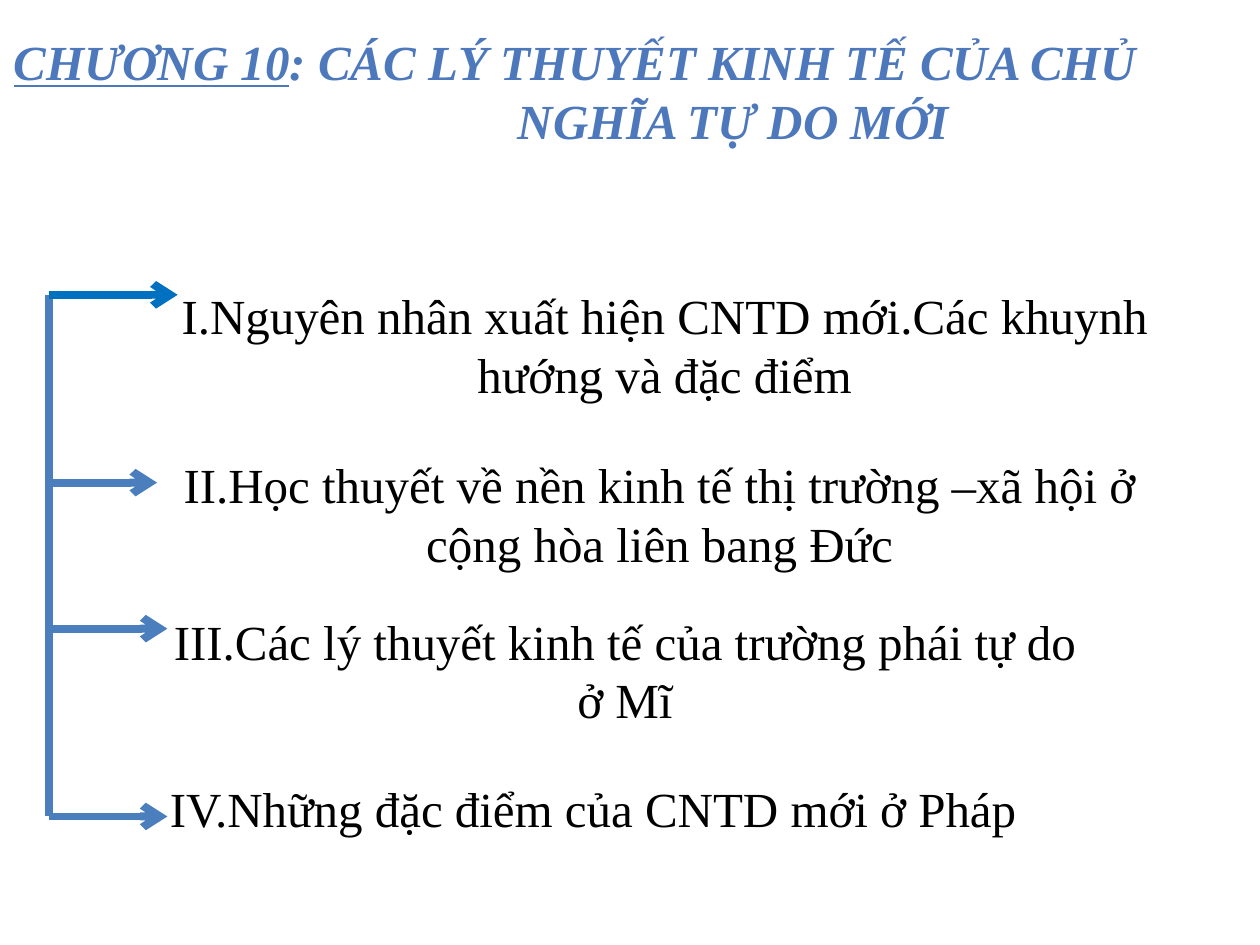
from lxml import etree
from pptx import Presentation
from pptx import util as u
from pptx.dml.color import RGBColor
from pptx.enum import shapes, text
from pptx.oxml import ns

COLUMNS, ROWS = 100, 75
CELL = u.Inches(0.1)
FONT = "Times New Roman"
BLUE, BRIGHT_BLUE, TITLE_BLUE, BLACK = "4B7EBC", "0070C0", "4D79BC", "000000"
CENTER, JUSTIFY = text.PP_ALIGN.CENTER, text.PP_ALIGN.JUSTIFY

TITLE_BOX = (0.1, 2, 100, 10.4)
TREE_BOX = (3.9, 23.4, 10.2, 41.4)
TOPICS = [
    ((9.4, 19.5, 86.7, 13), 3.2, CENTER,
     "I.Nguyên nhân xuất hiện CNTD mới.Các khuynh hướng và đặc điểm"),
    ((12.5, 30.5, 79.7, 15.1), 5.6, CENTER,
     "II.Học thuyết về nền kinh tế thị trường –xã hội ở cộng hòa liên bang Đức"),
    ((11.7, 43, 75.8, 15.1), 5.5, CENTER,
     "III.Các lý thuyết kinh tế của trường phái tự do ở Mĩ"),
    ((12.5, 56.3, 75, 10.4), 5.5, JUSTIFY,
     "IV.Những đặc điểm của CNTD mới ở Pháp"),
]
BRANCHES = [(0, 1, BRIGHT_BLUE), (0.36, 0.84, BLUE), (0.64, 0.92, BLUE), (1, 0.92, BLUE)]


def grid(cells):
    return u.Emu(round(cells * CELL))


def color(value):
    return RGBColor.from_string(value)


def place(shape, box):
    shape.left, shape.top, shape.width, shape.height = map(grid, box)


def add_run(paragraph, words, fill, **styles):
    run = paragraph.add_run()
    run.text = words
    run.font.name = FONT
    run.font.size = u.Pt(28)
    run.font.color.rgb = color(fill)
    for name, value in styles.items():
        setattr(run.font, name, value)


def add_title(slide, box):
    title = slide.shapes.title
    place(title, box)
    frame = title.text_frame
    frame.word_wrap = True
    frame.auto_size = text.MSO_AUTO_SIZE.NONE
    frame.vertical_anchor = text.MSO_ANCHOR.TOP
    paragraph = frame.paragraphs[0]
    paragraph.alignment = text.PP_ALIGN.LEFT
    hanging = grid(box[2] * 0.4)
    properties = paragraph._p.get_or_add_pPr()
    properties.set("marL", str(hanging))
    properties.set("indent", str(-hanging))
    add_run(paragraph, "CHƯƠNG 10", TITLE_BLUE, bold=True, italic=True, underline=True)
    add_run(paragraph, ": CÁC LÝ THUYẾT KINH TẾ CỦA CHỦ NGHĨA TỰ DO MỚI",
            TITLE_BLUE, bold=True, italic=True, underline=False)


def add_topic(slide, box, inset, alignment, words):
    frame = slide.shapes.add_textbox(*map(grid, box)).text_frame
    frame.word_wrap = True
    frame.margin_top = grid(inset)
    paragraph = frame.paragraphs[0]
    paragraph.alignment = alignment
    add_run(paragraph, words, BLACK)


def add_line(slide, start, end, stroke, arrow=False):
    line = slide.shapes.add_connector(
        shapes.MSO_CONNECTOR.STRAIGHT, *map(grid, start + end))
    line.line.color.rgb = color(stroke)
    line.line.width = u.Pt(4.5)
    if arrow:
        etree.SubElement(line.line._get_or_add_ln(), ns.qn("a:tailEnd"), type="arrow")
    etree.SubElement(line._element.spPr, ns.qn("a:effectLst"))


def add_tree(slide, box):
    left, top, width, height = box
    add_line(slide, (left, top), (left, top + height), BLUE)
    for depth, reach, stroke in BRANCHES:
        level = top + height * depth
        add_line(slide, (left, level), (left + width * reach, level), stroke, arrow=True)


def main():
    presentation = Presentation()
    presentation.slide_width = grid(COLUMNS)
    presentation.slide_height = grid(ROWS)
    slide = presentation.slides.add_slide(presentation.slide_layouts[5])
    add_title(slide, TITLE_BOX)
    for topic in TOPICS:
        add_topic(slide, *topic)
    add_tree(slide, TREE_BOX)
    presentation.save("out.pptx")


if __name__ == "__main__":
    main()
